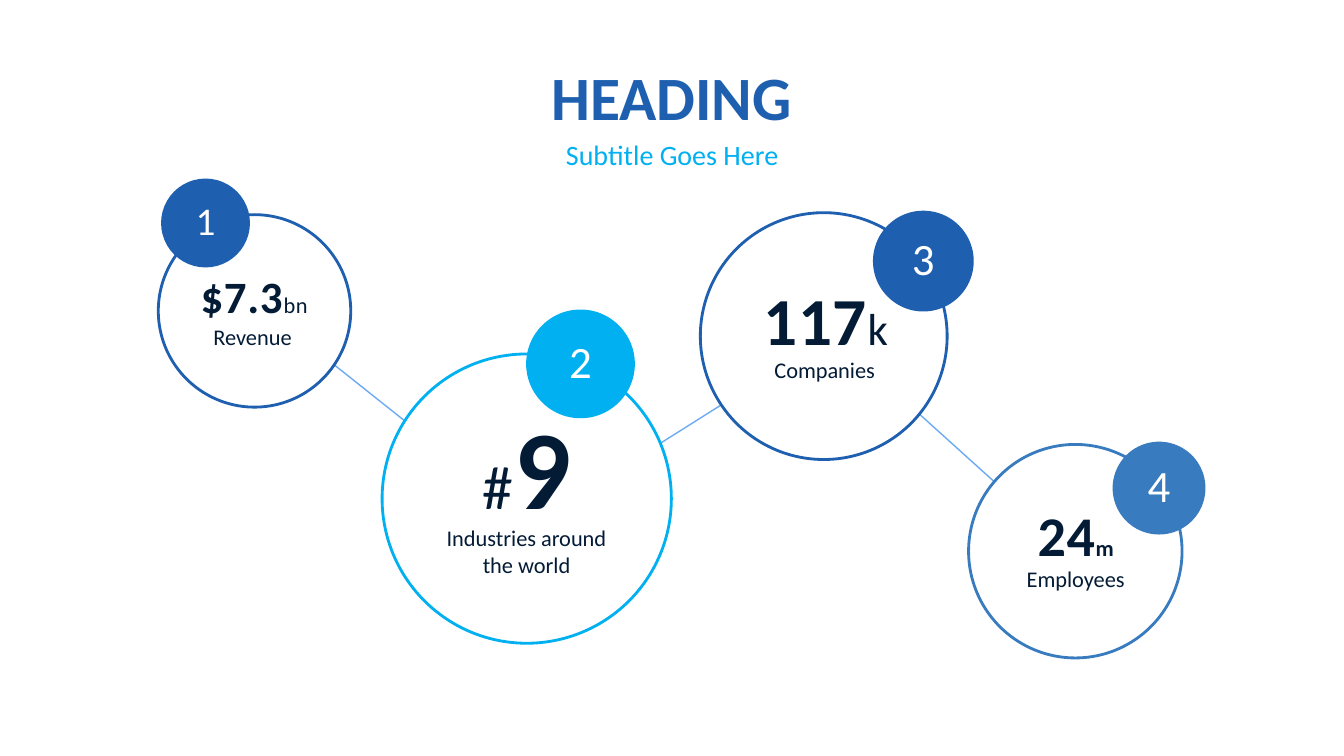
from dataclasses import dataclass
from typing import Any, NamedTuple

from pptx import Presentation
from pptx import util as u
from pptx.dml.color import RGBColor
from pptx.enum import shapes, text
from pptx.oxml.ns import qn


@dataclass(frozen=True)
class Theme:
    font: str = "Calibri"
    navy: str = "041B36"
    blue: str = "1E5FAF"
    cyan: str = "00B0F0"
    steel: str = "387CBF"
    link: str = "6CAAF4"
    white: str = "FFFFFF"
    heading: int = 44
    subtitle: int = 20
    caption: int = 16
    ring_width: float = 2
    link_width: float = 1


THEME = Theme()
NUMBER_LIFT = 0.08  # digits sit slightly above the badge centre


class Box(NamedTuple):
    left: float
    top: float
    width: float
    height: float


class Circle(NamedTuple):
    left: float
    top: float
    size: float


class Part(NamedTuple):
    words: str
    size: int
    bold: bool = False


@dataclass(frozen=True)
class Milestone:
    number: str
    number_size: int
    color: str
    ring: Circle
    badge: Circle
    figure: tuple[Part, ...]
    figure_box: Box
    caption: tuple[str, ...]
    caption_box: Box


MILESTONES = (
    Milestone("1", 28, THEME.blue, Circle(3.99, 5.41, 4.85), Circle(4.06, 4.5, 2.24),
              (Part("$7.3", 32, True), Part("bn", 16)), Box(4.78, 6.65, 3.25, 1.63),
              ("Revenue",), Box(5.11, 8.03, 2.51, 0.94)),
    Milestone("2", 32, THEME.cyan, Circle(9.63, 8.92, 7.29), Circle(13.26, 7.8, 2.74),
              (Part("#", 44), Part("9", 80, True)), Box(11.89, 9.88, 2.77, 3.68),
              ("Industries around", "the world"), Box(10.97, 13.08, 4.6, 1.63)),
    Milestone("3", 32, THEME.blue, Circle(17.65, 5.36, 6.22), Circle(22, 5.31, 2.54),
              (Part("117", 48, True), Part("k", 32)), Box(18.97, 6.88, 3.68, 2.31),
              ("Companies",), Box(19.25, 8.86, 3.07, 0.94)),
    Milestone("4", 32, THEME.steel, Circle(24.41, 11.2, 5.38), Circle(28.04, 11.13, 2.34),
              (Part("24", 40, True), Part("m", 16, True)), Box(25.88, 12.5, 2.46, 1.96),
              ("Employees",), Box(25.6, 14.12, 3.02, 0.94)),
)

# Start and end of each link, hidden behind the rings
LINKS = (
    (6.76, 7.87, 13.21, 13),
    (13.74, 13, 20.83, 8.53),
    (21.06, 8.53, 27.03, 13.92),
)


def apply_format(target: Any, values: dict[str, Any]) -> None:
    for name, value in values.items():
        setattr(target, name, value)


def add_text(slide: Any, box: Box, lines: tuple[tuple[Part, ...], ...], color: str,
             spacing: float = 0) -> None:
    frame = slide.shapes.add_textbox(*map(u.Cm, box)).text_frame
    apply_format(frame, {"word_wrap": False,
                         "auto_size": text.MSO_AUTO_SIZE.SHAPE_TO_FIT_TEXT})
    for index, line in enumerate(lines):
        paragraph = frame.add_paragraph() if index else frame.paragraphs[0]
        paragraph.alignment = text.PP_ALIGN.CENTER
        for part in line:
            run = paragraph.add_run()
            run.text = part.words
            apply_format(run.font, {"name": THEME.font, "size": u.Pt(part.size),
                                    "bold": part.bold})
            run.font.color.rgb = RGBColor.from_string(color)
            if spacing:
                run._r.get_or_add_rPr().set("spc", str(round(spacing * 100)))


def add_circle(slide: Any, circle: Circle, fill: str, outline: str | None = None) -> None:
    disc = slide.shapes.add_shape(
        shapes.MSO_SHAPE.OVAL, *map(u.Cm, (*circle, circle.size)))
    disc.shadow.inherit = False
    disc.fill.solid()
    disc.fill.fore_color.rgb = RGBColor.from_string(fill)
    if outline:
        disc.line.color.rgb = RGBColor.from_string(outline)
        disc.line.width = u.Pt(THEME.ring_width)
    else:
        disc.line.fill.background()


def add_link(slide: Any, ends: tuple[float, ...]) -> None:
    link = slide.shapes.add_connector(shapes.MSO_CONNECTOR.STRAIGHT, *map(u.Cm, ends))
    link.line.color.rgb = RGBColor.from_string(THEME.link)
    link.line.width = u.Pt(THEME.link_width)
    properties = link._element.spPr
    properties.append(properties.makeelement(qn("a:effectLst"), {}))


def number_box(badge: Circle, size: int) -> Box:
    width, height = (1.04, 1.45) if size < 32 else (1.12, 1.63)
    return Box(badge.left + (badge.size - width) / 2,
               badge.top + (badge.size - height) / 2 - NUMBER_LIFT, width, height)


def add_milestone(slide: Any, item: Milestone) -> None:
    add_circle(slide, item.ring, THEME.white, item.color)
    add_circle(slide, item.badge, item.color)
    add_text(slide, item.figure_box, (item.figure,), THEME.navy, spacing=0.5)
    caption = tuple((Part(line, THEME.caption),) for line in item.caption)
    add_text(slide, item.caption_box, caption, THEME.navy)
    add_text(slide, number_box(item.badge, item.number_size),
             ((Part(item.number, item.number_size),),), THEME.white)


def main() -> None:
    deck = Presentation()
    apply_format(deck, {"slide_width": u.Cm(33.87), "slide_height": u.Cm(19.05)})
    slide = deck.slides.add_slide(deck.slide_layouts[6])

    # Heading and subtitle
    add_text(slide, Box(13.61, 1.35, 6.63, 2.13),
             ((Part("HEADING", THEME.heading, True),),), THEME.blue)
    add_text(slide, Box(13.97, 3.35, 5.94, 1.12),
             ((Part("Subtitle Goes Here", THEME.subtitle),),), THEME.cyan)

    # Links first, so that the rings cover their ends
    for ends in LINKS:
        add_link(slide, ends)

    # Rings with badge, figure and caption
    for item in MILESTONES:
        add_milestone(slide, item)

    deck.save("out.pptx")


if __name__ == "__main__":
    main()
